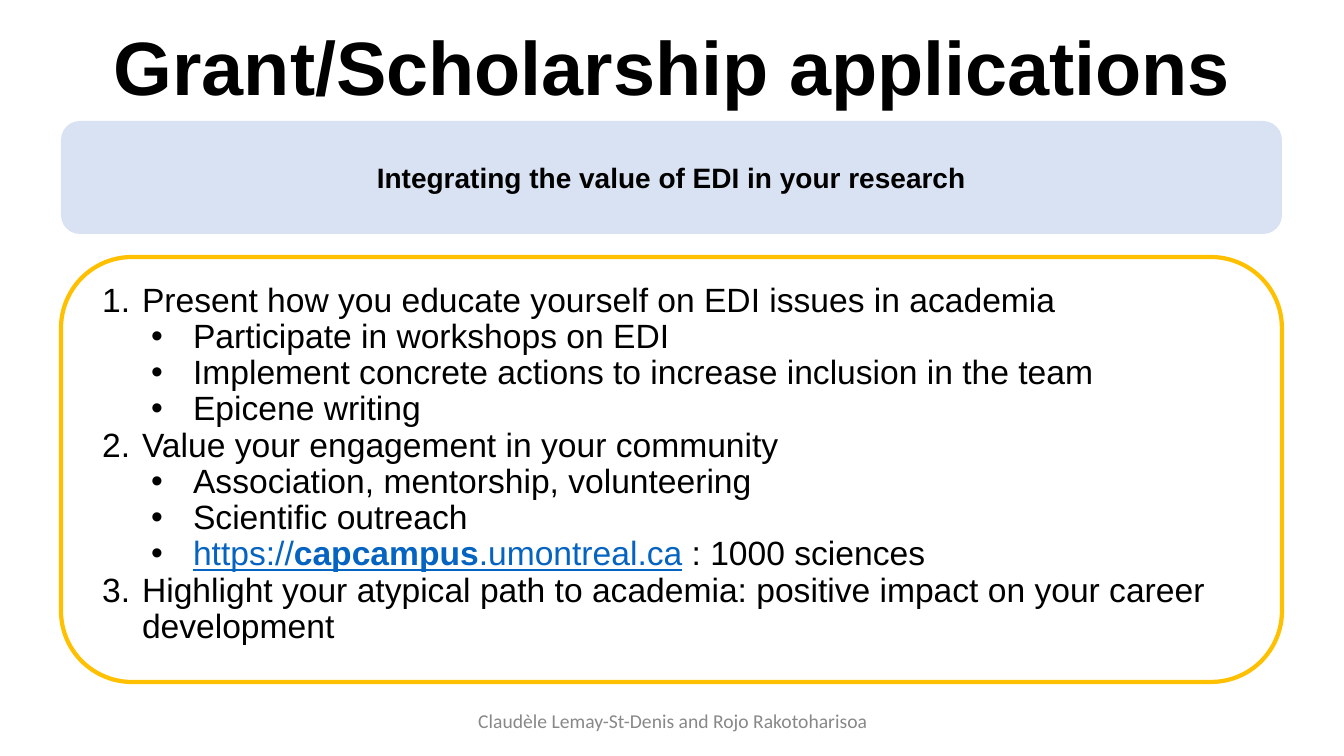
import pptx
import pptx.util
import pptx.dml.color
import pptx.enum.shapes
import pptx.enum.text
import pptx.oxml.ns
from lxml import etree

RGB = pptx.dml.color.RGBColor
BLACK = RGB(0x00, 0x00, 0x00)
GREY = RGB(0x88, 0x88, 0x88)
GOLD = RGB(0xFF, 0xC0, 0x00)
PALE_BLUE = RGB(0xD8, 0xE2, 0xF3)
LINK_BLUE = RGB(0x05, 0x63, 0xC1)

ALIGN = pptx.enum.text.PP_ALIGN
MIDDLE = pptx.enum.text.MSO_ANCHOR.MIDDLE
EMU_PER_PX = 914400 / 100.8

LINK = [("https://", {}), ("capcampus", {"bold": True}), (".umontreal.ca", {})]
ITEMS = [
    (0, "Present how you educate yourself on EDI issues in academia"),
    (1, "Participate in workshops on EDI"),
    (1, "Implement concrete actions to increase inclusion in the team"),
    (1, "Epicene writing"),
    (0, "Value your engagement in your community"),
    (1, "Association, mentorship, volunteering"),
    (1, "Scientific outreach"),
    (1, " : 1000 sciences"),
    (0, "Highlight your atypical path to academia: positive impact on your "
        "career development"),
]
LINK_ITEM = 7
INDENTS = [(50, -40), (101, -42)]  # left margin and first-line offset per level


def px(n):
    return pptx.util.Emu(round(n * EMU_PER_PX))


def place(shape, box):
    shape.left, shape.top, shape.width, shape.height = map(px, box)


def add_text(p, text, size=24, font="Arial", color=BLACK, bold=False, underline=False):
    r = p.add_run()
    r.text = text
    r.font.size = pptx.util.Pt(size)
    r.font.name = font
    r.font.color.rgb = color
    r.font.bold = bold
    r.font.underline = underline


def centre(tf):
    """Centre a one-line text frame both ways and return its paragraph."""
    tf.word_wrap = True
    tf.auto_size = pptx.enum.text.MSO_AUTO_SIZE.NONE
    tf.vertical_anchor = MIDDLE
    p = tf.paragraphs[0]
    p.alignment = ALIGN.CENTER
    return p


def add_panel(s, box, fill=None, line=None):
    sp = s.shapes.add_shape(pptx.enum.shapes.MSO_SHAPE.ROUNDED_RECTANGLE, *map(px, box))
    sp.shadow.inherit = False
    sp.adjustments[0] = 0.167
    if fill is None:
        sp.fill.background()
    else:
        sp.fill.solid()
        sp.fill.fore_color.rgb = fill
    if line is None:
        sp.line.fill.background()
    else:
        sp.line.color.rgb = line
        sp.line.width = pptx.util.Pt(3)
    return sp


def set_bullet(p, level):
    """Number the top level and put a dot before the second."""
    margin, offset = INDENTS[level]
    p.level = level
    pPr = p._p.get_or_add_pPr()
    pPr.set("marL", str(px(margin)))
    pPr.set("indent", str(px(offset)))
    qn = pptx.oxml.ns.qn
    colour = etree.SubElement(pPr, qn("a:buClr"))
    etree.SubElement(colour, qn("a:srgbClr"), val=str(BLACK))
    etree.SubElement(pPr, qn("a:buFont"), typeface="Arial")
    if level == 0:
        etree.SubElement(pPr, qn("a:buAutoNum"), type="arabicPeriod")
    else:
        etree.SubElement(pPr, qn("a:buChar"), char="•")


def build_title(s, box):
    title = s.shapes.title
    place(title, box)
    p = centre(title.text_frame)
    p.line_spacing = 0.9
    add_text(p, "Grant/Scholarship applications", size=54, bold=True)


def build_banner(s, box):
    sp = add_panel(s, box, fill=PALE_BLUE)
    add_text(centre(sp.text_frame), "Integrating the value of EDI in your research",
             size=20, bold=True)


def build_list(s, box):
    add_panel(s, box, line=GOLD)
    left, top, width, height = box
    inset = 21
    body = s.placeholders[1]
    place(body, (left + inset, top + inset, width - 2 * inset, height - 2 * inset))
    tf = body.text_frame
    tf.word_wrap = True
    tf.auto_size = pptx.enum.text.MSO_AUTO_SIZE.NONE
    tf.vertical_anchor = pptx.enum.text.MSO_ANCHOR.TOP
    for i, (level, text) in enumerate(ITEMS):
        p = tf.add_paragraph() if i else tf.paragraphs[0]
        p.alignment = ALIGN.LEFT
        p.line_spacing = 0.9
        p.space_before = pptx.util.Pt(0)
        set_bullet(p, level)
        if i == LINK_ITEM:
            for part, style in LINK:
                add_text(p, part, color=LINK_BLUE, underline=True, **style)
        add_text(p, text)


def build_footer(s, box):
    tb = s.shapes.add_textbox(*map(px, box))
    add_text(centre(tb.text_frame), "Claudèle Lemay-St-Denis and Rojo Rakotoharisoa",
             size=14, font="Calibri", color=GREY)


def main():
    prs = pptx.Presentation()
    prs.slide_width, prs.slide_height = px(1344), px(756)
    s = prs.slides.add_slide(prs.slide_layouts[1])
    build_title(s, (93, -2, 1159, 146))
    build_list(s, (61, 257, 1221, 425))
    build_banner(s, (61, 121, 1221, 113))
    build_footer(s, (446, 701, 454, 40))
    prs.save("out.pptx")


if __name__ == "__main__":
    main()
